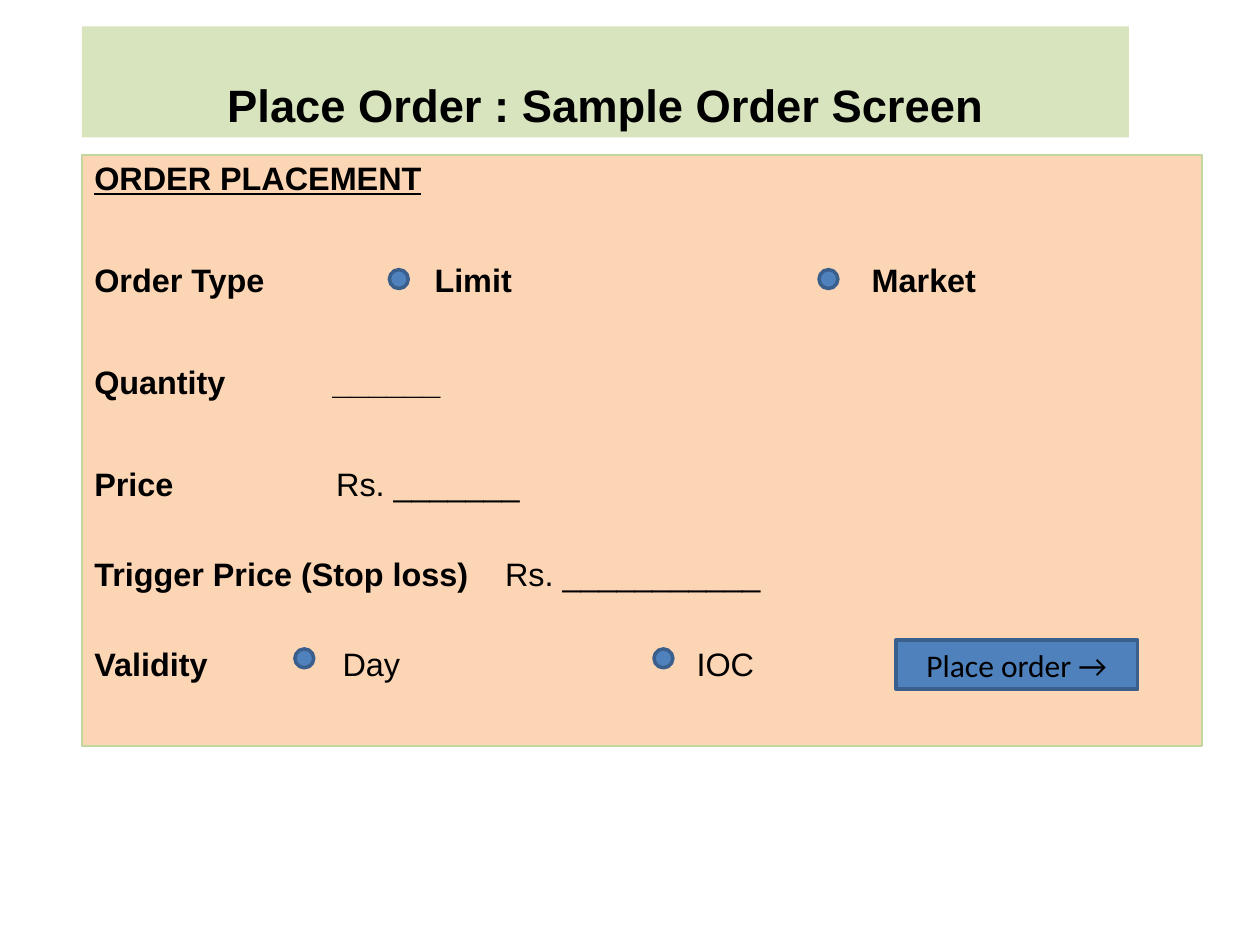
import pptx
import pptx.dml.color
import pptx.enum.shapes
import pptx.enum.text
import pptx.util
from pptx.util import Inches
import lxml.etree

SHAPES = pptx.enum.shapes.MSO_SHAPE
ANCHORS = pptx.enum.text.MSO_ANCHOR
ALIGN = pptx.enum.text.PP_ALIGN


def rgb(value):
    return pptx.dml.color.RGBColor.from_string(value)


def add_box(kind, left, top, width, height, fill, line=None, line_width=2):
    box = slide.shapes.add_shape(
        kind, Inches(left), Inches(top), Inches(width), Inches(height))
    box.shadow.inherit = False
    box.fill.solid()
    box.fill.fore_color.rgb = rgb(fill)
    if line:
        box.line.color.rgb = rgb(line)
        box.line.width = pptx.util.Pt(line_width)
    else:
        box.line.fill.background()
    return box


deck = pptx.Presentation()
deck.slide_width, deck.slide_height = Inches(10), Inches(7.5)
slide = deck.slides.add_slide(deck.slide_layouts[6])

# Title banner and order button: one centred line each
title = add_box(SHAPES.RECTANGLE, 0.65, 0.21, 8.31, 0.88, "D7E4BD")
title.text_frame.margin_left = title.text_frame.margin_right = Inches(0.08)
title.text_frame.margin_top = title.text_frame.margin_bottom = Inches(0.04)

# Order form: (label, [(field, tab position)], field bold, space before)
form = add_box(SHAPES.RECTANGLE, 0.65, 1.23, 8.89, 4.69, "FCD5B5", "C3D69B", 0.75)
form_rows = [
    ("ORDER PLACEMENT", [], True, 0),
    ("Order Type", [("Limit", 2.7), ("Market", 6.17)], True, 37.8),
    ("Quantity", [("______", 1.89)], True, 37.8),
    ("Price", [("Rs. _______", 1.92)], False, 37.8),
    ("Trigger Price (Stop loss)", [("Rs. ___________", 3.26)], False, 30.9),
    ("Validity", [("Day", 1.97), ("IOC", 4.78)], False, 30.9),
]
form.text_frame.word_wrap = True
form.text_frame.vertical_anchor = ANCHORS.TOP
for number, (label, fields, field_bold, space) in enumerate(form_rows):
    row = form.text_frame.paragraphs[0] if number == 0 else form.text_frame.add_paragraph()
    row.alignment = ALIGN.LEFT
    row.line_spacing = pptx.util.Pt(20.5)
    row.space_before = pptx.util.Pt(space)
    row.add_run().text = label
    if fields:
        row.add_run().text = "".join("\t" + field for field, _ in fields)
        tabs = lxml.etree.SubElement(
            row._p.get_or_add_pPr(), pptx.oxml.ns.qn("a:tabLst"))
        for _, position in fields:
            lxml.etree.SubElement(tabs, pptx.oxml.ns.qn("a:tab"),
                                  pos=str(Inches(position)), algn="l")
    for run, bold in zip(row.runs, (True, field_bold)):
        run.font.name = "Arial"
        run.font.size = pptx.util.Pt(18.5)
        run.font.bold = bold
        run.font.color.rgb = rgb("000000")
form.text_frame.paragraphs[0].runs[0].font.underline = True

# Radio buttons for order type and validity
for left, top in [(3.09, 2.14), (6.5, 2.14), (2.34, 5.15), (5.19, 5.15)]:
    add_box(SHAPES.OVAL, left, top, 0.15, 0.15, "4F81BD", "3A5F8C")

# Place order button
button = add_box(SHAPES.RECTANGLE, 7.11, 5.08, 1.92, 0.39, "4F81BD", "3A5F8C")

# Captions of the banner and the button
for box, caption, font, size, bold, anchor, spacing in [
    (title, "Place Order : Sample Order Screen", "Arial", 25.9, True, ANCHORS.BOTTOM, 0.9),
    (button, "Place order →", "Calibri", 18, False, ANCHORS.MIDDLE, 1.0),
]:
    box.text_frame.text = caption
    box.text_frame.word_wrap = True
    box.text_frame.vertical_anchor = anchor
    line = box.text_frame.paragraphs[0]
    line.alignment = ALIGN.CENTER
    line.line_spacing = spacing
    line.runs[0].font.name = font
    line.runs[0].font.size = pptx.util.Pt(size)
    line.runs[0].font.bold = bold
    line.runs[0].font.color.rgb = rgb("000000")

deck.save("out.pptx")
